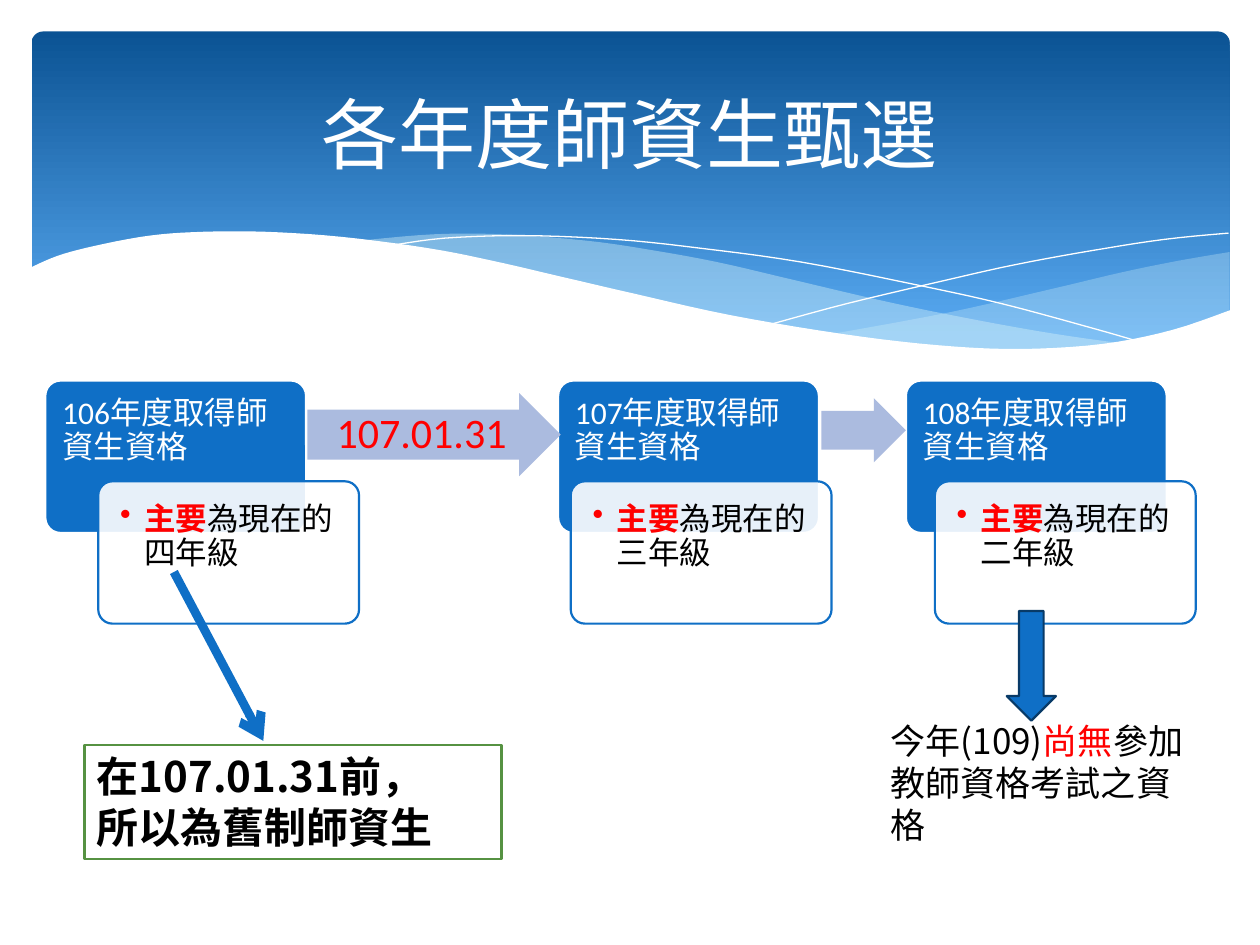
from dataclasses import dataclass

from lxml import etree
from pptx import Presentation
from pptx.dml.color import RGBColor
from pptx.enum.shapes import MSO_CONNECTOR, MSO_SHAPE
from pptx.enum.text import MSO_ANCHOR, PP_ALIGN
from pptx.oxml.ns import qn
from pptx.util import Emu, Pt

ROUND, RECT = MSO_SHAPE.ROUNDED_RECTANGLE, MSO_SHAPE.RECTANGLE
RIGHT, DOWN = MSO_SHAPE.RIGHT_ARROW, MSO_SHAPE.DOWN_ARROW
TOP, MIDDLE = MSO_ANCHOR.TOP, MSO_ANCHOR.MIDDLE
LEFT, CENTER = PP_ALIGN.LEFT, PP_ALIGN.CENTER

PX = 9144  # 100 px to the inch
LATIN, CJK = "Calibri", "Noto Sans CJK JP"
BLUE, PALE_BLUE, NAVY, GREEN = "0F6FC6", "ABBBDF", "083A67", "569242"
MIST, WHITE, BLACK, RED = "DBF5F9", "FFFFFF", "000000", "FF0000"

Points = list[tuple[float, float]]
Runs = list[tuple[str, str, bool]]  # text, colour, bold


@dataclass
class Wave:
    """Smooth edges joined in order; a filled outline, or a thin line if alpha is 0."""
    edges: list[Points]
    color: str
    alpha: int


@dataclass
class Stage:
    x: int
    detail_x: int
    year: int
    grade: str


WAVES = [
    Wave([[(976, 200), (935, 207), (891, 216), (832, 230), (753, 248), (661, 265)],
          [(661, 265), (705, 271), (757, 276), (814, 278), (863, 275), (913, 267),
           (949, 257), (976, 247)]], MIST, 29),
    Wave([[(893, 273), (837, 265), (775, 254), (706, 240), (629, 222), (569, 208),
           (514, 198), (465, 191), (399, 186), (344, 186), (286, 191)],
          [(286, 191), (342, 199), (404, 211), (449, 222), (530, 240), (601, 255),
           (665, 266), (722, 274), (785, 278), (838, 278), (893, 273)]], MIST, 40),
    Wave([[(309, 195), (353, 189), (416, 187), (489, 190), (556, 197), (636, 208),
           (727, 226), (795, 241), (869, 261), (907, 272)]], WHITE, 0),
    Wave([[(613, 257), (672, 241), (748, 223), (806, 210), (866, 199), (924, 190),
           (975, 185)]], WHITE, 0),
    Wave([[(977, 246), (930, 262), (875, 273), (809, 277), (744, 274), (668, 265),
           (579, 250), (503, 233), (447, 220), (391, 207), (340, 197), (271, 188),
           (211, 184), (161, 184), (119, 187), (76, 195), (46, 203), (23, 213)],
          [(23, 329), (977, 329)]], WHITE, 100),
]
STAGES = [
    Stage(36, 78, 106, "四"),
    Stage(443, 453, 107, "三"),
    Stage(719, 742, 108, "二"),
]


def rgb(color: str) -> RGBColor:
    return RGBColor.from_string(color)


def fill_shape(sp, color: str, alpha: int = 100) -> None:
    sp.fill.solid()
    sp.fill.fore_color.rgb = rgb(color)
    if alpha < 100:
        clr = sp._element.spPr.find(f"{qn('a:solidFill')}/{qn('a:srgbClr')}")
        etree.SubElement(clr, qn("a:alpha"), val=str(alpha * 1000))


def outline(line, color: str, width: float) -> None:
    line.color.rgb = rgb(color)
    line.width = Pt(width)


def add_box(s, kind, box, fill, line=None, alpha=100, adj=()):
    sp = s.shapes.add_shape(kind, *(v * PX for v in box))
    sp.shadow.inherit = False
    fill_shape(sp, fill, alpha)
    if line:
        outline(sp.line, line, 1.25)
    else:
        sp.line.fill.background()
    for i, value in enumerate(adj):
        sp.adjustments[i] = value
    return sp


def write(sp, paragraphs: list[Runs], size: int, font: str = CJK, align=LEFT,
          anchor=TOP, insets=(10, 5, 10, 5), spacing: float = 1) -> None:
    tf = sp.text_frame
    tf.word_wrap = True
    tf.vertical_anchor = anchor
    tf.margin_left, tf.margin_top, tf.margin_right, tf.margin_bottom = (
        v * PX for v in insets)
    for i, runs in enumerate(paragraphs):
        p = tf.add_paragraph() if i else tf.paragraphs[0]
        p.alignment, p.line_spacing = align, spacing
        p.font.size, p.font.name = Pt(size), font
        etree.SubElement(p.font._element, qn("a:ea"), typeface=CJK)
        for text, color, bold in runs:
            r = p.add_run()
            r.text = text
            r.font.color.rgb = rgb(color)
            r.font.bold = bold


def add_bullet(p, indent: int) -> None:
    pPr = p._p.get_or_add_pPr()
    pPr.set("marL", str(indent * PX))
    pPr.set("indent", str(-indent * PX))
    bullet = etree.Element(qn("a:buChar"), char="•")
    pPr.find(qn("a:defRPr")).addprevious(bullet)


def smooth(points: Points, steps: int = 5) -> Points:
    """Sample a Catmull-Rom spline through the points."""
    if len(points) < 3:
        return points
    ends = [points[0], *points, points[-1]]
    curve = [points[0]]
    for a, b, c, d in zip(ends, ends[1:], ends[2:], ends[3:]):
        for t in (k / steps for k in range(1, steps + 1)):
            curve.append(tuple(
                (2 * q + (r - p) * t + (2 * p - 5 * q + 4 * r - v) * t ** 2
                 + (3 * q - p - 3 * r + v) * t ** 3) / 2
                for p, q, r, v in zip(a, b, c, d)))
    return curve


def add_wave(s, wave: Wave) -> None:
    points = [(round(x * PX), round(y * PX))
              for edge in wave.edges for x, y in smooth(edge)]
    builder = s.shapes.build_freeform(*points[0])
    builder.add_line_segments(points[1:], close=wave.alpha > 0)
    sp = builder.convert_to_shape()
    sp.shadow.inherit = False
    if wave.alpha:
        fill_shape(sp, wave.color, wave.alpha)
        sp.line.fill.background()
    else:
        sp.fill.background()
        outline(sp.line, wave.color, 0)


def add_banner(s) -> None:
    sp = add_box(s, ROUND, (25, 25, 951, 270), BLUE, adj=(0.034,))
    sp.fill.gradient()
    sp.fill.gradient_angle = 270
    for stop, color, pos in zip(sp.fill.gradient_stops, ("0B5394", "59AAF2"), (0, 0.9)):
        stop.color.rgb, stop.position = rgb(color), pos
    for wave in WAVES:
        add_wave(s, wave)


def add_stage(s, stage: Stage) -> None:
    card = add_box(s, ROUND, (stage.x, 302, 207, 121), BLUE, WHITE, adj=(0.1,))
    write(card, [[(f"{stage.year}年度取得師資生資格", WHITE, False)]], 18, LATIN,
          insets=(10, 10, 10, 7), spacing=0.9)
    detail = add_box(s, ROUND, (stage.detail_x, 382, 207, 113), WHITE, BLUE, 90, (0.1,))
    write(detail, [[("主要", RED, True), (f"為現在的{stage.grade}年級", BLACK, False)]],
          18, LATIN, insets=(14, 14, 14, 14), spacing=0.9)
    add_bullet(detail.text_frame.paragraphs[0], 19)


def add_arrow_line(s, start, end) -> None:
    line = s.shapes.add_connector(MSO_CONNECTOR.STRAIGHT, *(v * PX for v in start + end))
    outline(line.line, BLUE, 5)
    etree.SubElement(line.line._get_or_add_ln(), qn("a:tailEnd"), type="arrow")
    etree.SubElement(line._element.spPr, qn("a:effectLst"))


def main() -> None:
    prs = Presentation()
    prs.slide_width, prs.slide_height = Emu(1000 * PX), Emu(750 * PX)
    s = prs.slides.add_slide(prs.slide_layouts[5])
    add_banner(s)

    for stage in STAGES:
        add_stage(s, stage)
    date_arrow = add_box(s, RIGHT, (244, 312, 201, 66), PALE_BLUE, adj=(0.6, 0.5))
    write(date_arrow, [[("107.01.31", RED, False)]], 24, LATIN, CENTER, MIDDLE,
          (0, 0, 0, 0), 0.9)
    add_box(s, RIGHT, (652, 316, 67, 51), PALE_BLUE, adj=(0.6, 0.5))

    title = s.shapes.title
    title.left, title.top, title.width, title.height = (
        v * PX for v in (50, 37, 900, 137))
    write(title, [[("各年度師資生甄選", WHITE, False)]], 44, align=CENTER, anchor=MIDDLE)
    s.shapes._spTree.append(title._element)  # in front of the banner

    old_rule = add_box(s, RECT, (67, 591, 331, 91), WHITE, GREEN)
    write(old_rule, [[("在107.01.31前，", BLACK, True)],
                     [("所以為舊制師資生", BLACK, True)]], 24)
    add_arrow_line(s, (138, 454), (209, 588))
    add_box(s, DOWN, (799, 485, 39, 87), BLUE, NAVY)
    note = s.shapes.add_textbox(*(v * PX for v in (697, 566, 252, 111)))
    write(note, [[("今年(109)", BLACK, False), ("尚無", RED, False),
                  ("參加教師資格考試之資格", BLACK, False)]], 20)
    prs.save("out.pptx")


if __name__ == "__main__":
    main()
